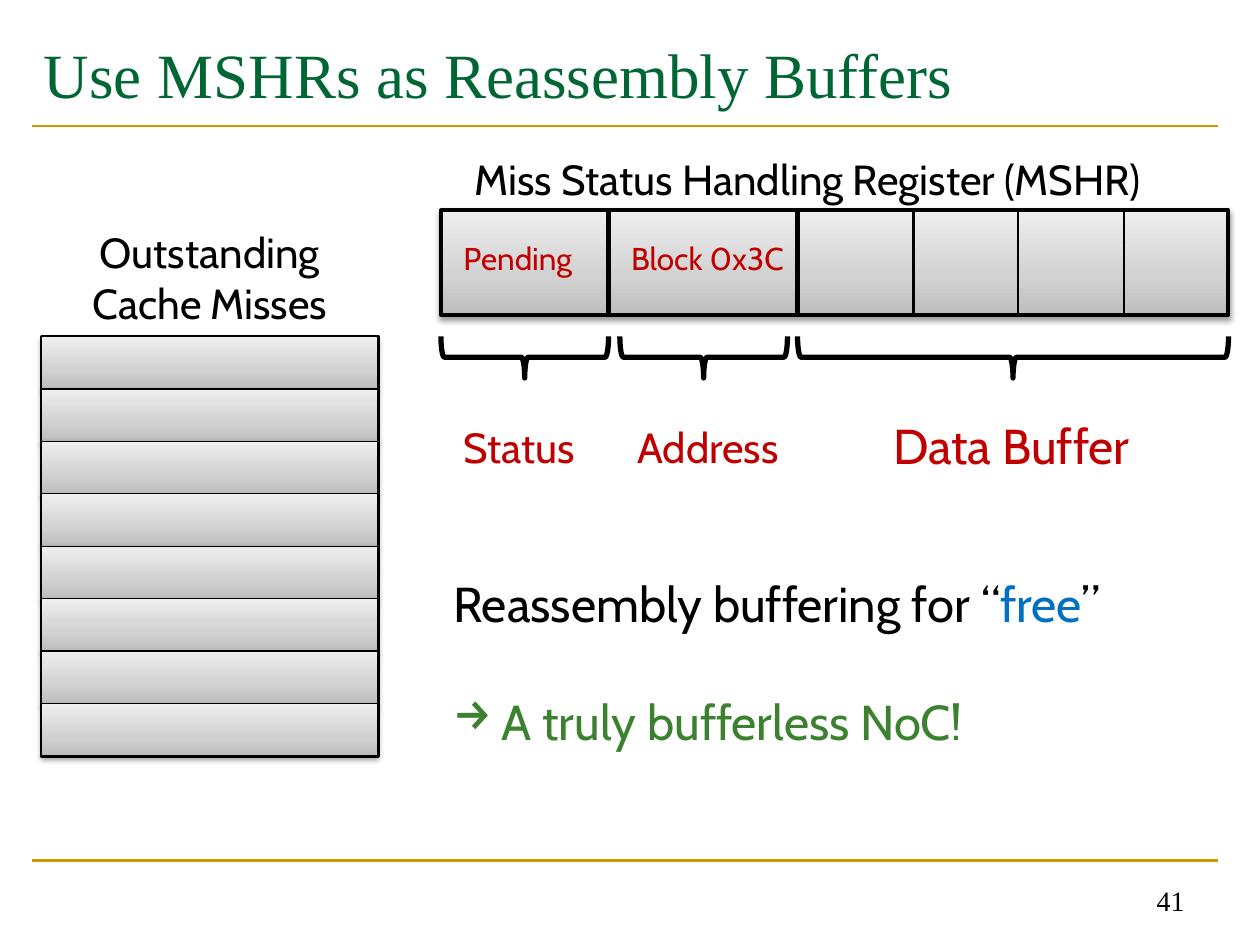
from lxml import etree
from pptx import Presentation
from pptx import oxml
from pptx.dml.color import RGBColor
from pptx.enum import shapes, text
from pptx.oxml import ns
from pptx.util import Inches, Pt

COLORS = {
    "black": "000000", "white": "FFFFFF", "gold": "CC9900", "title": "006633",
    "red": "C00000", "blue": "0070C0", "green": "3B812F",
    "dark": "BDBDBD", "middle": "D1D1D1", "light": "EEEEEE",
}
BODY_FONT = "Cabin"
TITLE_FONT = "Times New Roman"
REGISTER_LEFT, REGISTER_TOP, REGISTER_WIDTH, REGISTER_HEIGHT = 3.5, 1.67, 6.25, 0.83
MISS_LEFT, MISS_TOP, MISS_WIDTH, MISS_HEIGHT = 0.33, 2.67, 2.67, 3.33
MISS_ROWS = 8


def color(name):
    return RGBColor.from_string(COLORS[name])


def set_font(font, size, name, color_name):
    font.size = Pt(size)
    font.name = name
    font.color.rgb = color(color_name)


def add_line(slide, start, end, width, color_name="black"):
    line = slide.shapes.add_connector(
        shapes.MSO_CONNECTOR.STRAIGHT, *[Inches(value) for value in (*start, *end)])
    line.line.width = Pt(width)
    line.line.color.rgb = color(color_name)
    etree.SubElement(line._element.spPr, ns.qn("a:effectLst"))


def add_shape(slide, kind, left, top, width, height, line_width):
    shape = slide.shapes.add_shape(
        kind, Inches(left), Inches(top), Inches(width), Inches(height))
    shape.shadow.inherit = False
    shape.line.width = Pt(line_width)
    shape.line.color.rgb = color("black")
    return shape


def add_metal_box(slide, left, top, width, height, line_width):
    shape = add_shape(slide, shapes.MSO_SHAPE.RECTANGLE,
                      left, top, width, height, line_width)
    shape.fill.gradient()
    gradient = shape._element.spPr.find(ns.qn("a:gradFill"))
    stops = "".join(
        f'<a:gs pos="{position}"><a:srgbClr val="{COLORS[name]}"/></a:gs>'
        for position, name in ((0, "dark"), (35000, "middle"), (100000, "light")))
    gradient.getparent().replace(gradient, oxml.parse_xml(
        f'<a:gradFill {ns.nsdecls("a")} rotWithShape="1"><a:gsLst>{stops}</a:gsLst>'
        '<a:lin ang="16200000" scaled="0"/></a:gradFill>'))
    effects = shape._element.spPr.find(ns.qn("a:effectLst"))
    effects.append(oxml.parse_xml(
        f'<a:outerShdw {ns.nsdecls("a")} blurRad="{Pt(3.1)}" dist="{Pt(1.6)}" '
        'dir="5400000" rotWithShape="0"><a:srgbClr val="000000">'
        '<a:alpha val="38000"/></a:srgbClr></a:outerShdw>'))


def add_brace(slide, left, right, top=2.67, depth=0.33):
    span = right - left
    shape = add_shape(slide, shapes.MSO_SHAPE.LEFT_BRACE, (left + right - depth) / 2,
                      top + (depth - span) / 2, depth, span, 3)
    shape.rotation = 270
    shape.fill.background()


def add_text(slide, content, left, top, width, height, size, color_name="black",
             font=BODY_FONT, align=text.PP_ALIGN.LEFT, anchor=text.MSO_ANCHOR.TOP,
             wrap=False):
    box = slide.shapes.add_textbox(
        Inches(left), Inches(top), Inches(width), Inches(height))
    frame = box.text_frame
    frame.word_wrap = wrap
    frame.vertical_anchor = anchor
    frame.text = content
    for paragraph in frame.paragraphs:
        paragraph.alignment = align
        set_font(paragraph.font, size, font, color_name)


def add_frame(slide):
    for y in (6.83, 1):
        add_line(slide, (0.25, y), (9.67, y), 1.5, "gold")
    add_text(slide, "Use MSHRs as Reassembly Buffers", 0.25, 0.17, 9.42, 0.83, 36,
             "title", TITLE_FONT, anchor=text.MSO_ANCHOR.MIDDLE, wrap=True)
    add_text(slide, "41", 7.17, 6.83, 2.33, 0.5, 16, font=TITLE_FONT,
             align=text.PP_ALIGN.RIGHT, anchor=text.MSO_ANCHOR.BOTTOM, wrap=True)


def add_cache_misses(slide):
    outline = add_shape(slide, shapes.MSO_SHAPE.RECTANGLE,
                        MISS_LEFT, MISS_TOP, MISS_WIDTH, MISS_HEIGHT, 2)
    outline.fill.solid()
    outline.fill.fore_color.rgb = color("white")
    row_height = MISS_HEIGHT / MISS_ROWS
    for row in range(MISS_ROWS):
        add_metal_box(slide, MISS_LEFT, MISS_TOP + row * row_height,
                      MISS_WIDTH, row_height, 0.75)
    add_text(slide, "Outstanding\nCache Misses", 0.58, 1.75, 2.17, 0.91, 24,
             align=text.PP_ALIGN.CENTER)


def add_register(slide):
    add_metal_box(slide, REGISTER_LEFT, REGISTER_TOP,
                  REGISTER_WIDTH, REGISTER_HEIGHT, 2.25)
    add_text(slide, "Miss Status Handling Register (MSHR)", 3.67, 1.17, 5.84, 0.5, 24)
    for x, width in ((4.83, 3), (6.33, 3), (7.25, 1.5), (8.08, 1.5), (8.92, 1.5)):
        add_line(slide, (x, REGISTER_TOP), (x, REGISTER_TOP + REGISTER_HEIGHT), width)
    for left, right in ((3.5, 4.83), (4.92, 6.25), (6.33, 9.75)):
        add_brace(slide, left, right)
    for label, left, top, width, height, size in (
            ("Pending", 3.58, 1.85, 1.09, 0.4, 18),
            ("Block 0x3C", 4.91, 1.85, 1.42, 0.4, 18),
            ("Status", 3.58, 3.3, 1.13, 0.5, 24),
            ("Address", 4.96, 3.3, 1.37, 0.5, 24),
            ("Data Buffer", 6.99, 3.25, 2.18, 0.57, 28)):
        add_text(slide, label, left, top, width, height, size, "red")


def add_conclusion(slide):
    box = slide.shapes.add_textbox(Inches(3.5), Inches(4.5), Inches(6.08), Inches(1.51))
    frame = box.text_frame
    frame.word_wrap = True
    claim = frame.paragraphs[0]
    for words, color_name in (("Reassembly buffering for “", "black"),
                              ("free", "blue"), ("”", "black")):
        run = claim.add_run()
        run.text = words
        set_font(run.font, 28, BODY_FONT, color_name)
    result = frame.add_paragraph()
    result.text = "A truly bufferless NoC!"
    result.space_before = Pt(34)
    properties = result._element.get_or_add_pPr()
    properties.set("marL", str(Inches(0.38)))
    properties.set("indent", str(Inches(-0.38)))
    etree.SubElement(properties, ns.qn("a:buChar"), char="→")
    set_font(result.font, 28, BODY_FONT, "green")


def main():
    presentation = Presentation()
    presentation.slide_width = Inches(10)
    presentation.slide_height = Inches(7.5)
    slide = presentation.slides.add_slide(presentation.slide_layouts[6])
    add_frame(slide)
    add_cache_misses(slide)
    add_register(slide)
    add_conclusion(slide)
    presentation.save("out.pptx")


if __name__ == "__main__":
    main()
